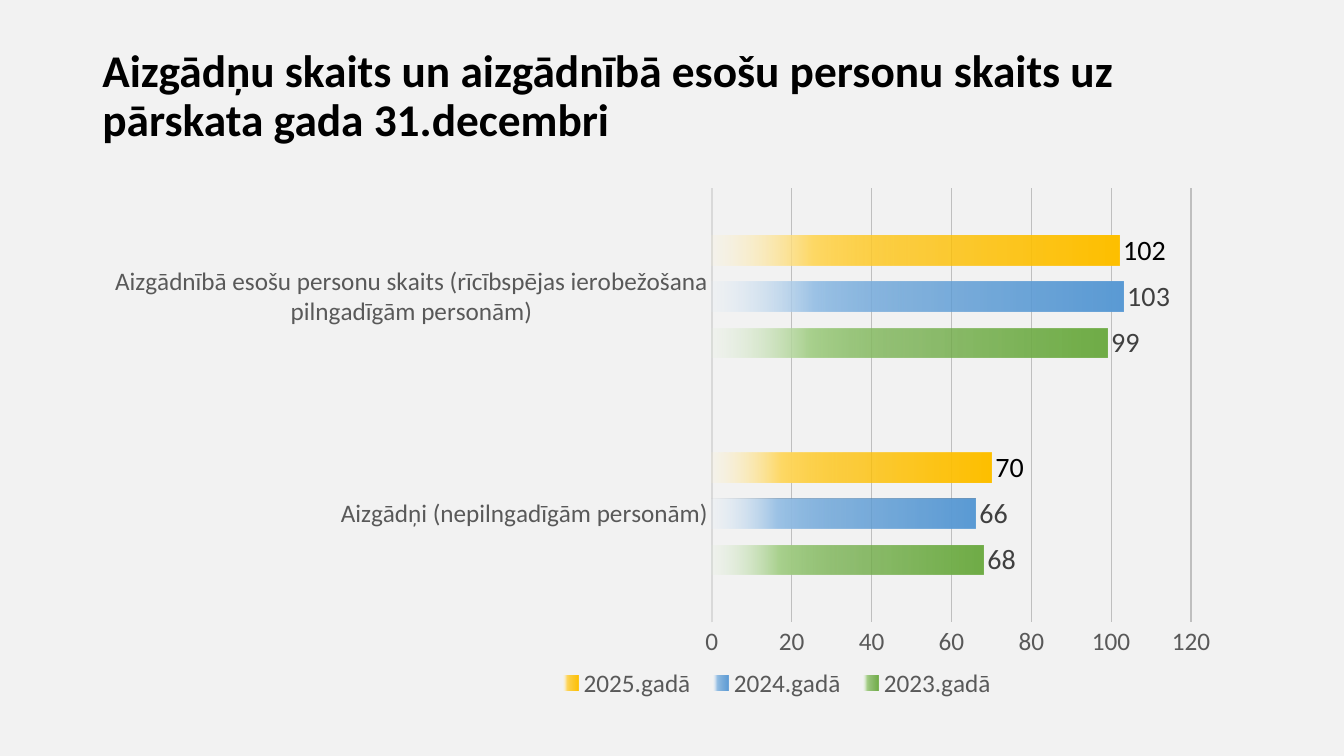
from lxml import etree
from pptx import Presentation
from pptx.chart.data import CategoryChartData
from pptx.dml.color import RGBColor
from pptx.enum.chart import XL_CHART_TYPE, XL_LABEL_POSITION, XL_LEGEND_POSITION, XL_TICK_MARK
from pptx.enum.text import MSO_ANCHOR
from pptx.oxml import parse_xml
from pptx.oxml.ns import nsdecls, qn
from pptx.util import Cm, Pt

CLUSTERED_BARS = XL_CHART_TYPE.BAR_CLUSTERED
OUTSIDE_END = XL_LABEL_POSITION.OUTSIDE_END
BOTTOM = XL_LEGEND_POSITION.BOTTOM
NO_TICK = XL_TICK_MARK.NONE
MIDDLE = MSO_ANCHOR.MIDDLE

FONT = "Calibri"
COLORS = {
    "background": "F2F2F2",
    "heading": "000000",
    "axis_text": "595959",
    "value_text": "404040",
    "axis_line": "D9D9D9",
    "grid": "BFBFBF",
}
HEADING = "Aizgādņu skaits un aizgādnībā esošu personu skaits uz pārskata gada 31.decembri"
GUARDIANSHIPS = [
    "Aizgādņi (nepilngadīgām personām)",
    "Aizgādnībā esošu personu skaits (rīcībspējas ierobežošana pilngadīgām personām)",
]
YEARS = [
    ("2023.gadā", (68, 99), ("70AD47", "A9D18E", "E2F0D9"), "value_text"),
    ("2024.gadā", (66, 103), ("5B9BD5", "9DC3E6", "DEEBF7"), "value_text"),
    ("2025.gadā", (70, 102), ("FFC000", "FFD966", "FFF2CC"), "heading"),
]


def rgb(name):
    return RGBColor.from_string(COLORS[name])


def style_font(font, size, color, bold=False):
    font.name = FONT
    font.size = Pt(size)
    font.bold = bold
    font.color.rgb = rgb(color)


def fade_fill(strong, light, pale):
    stops = [(0, strong, 100), (51, strong, 75), (75, light, 100), (100, pale, 15)]
    fill = parse_xml(f'<a:gradFill {nsdecls("a")}><a:gsLst/><a:lin ang="10800000" scaled="0"/></a:gradFill>')
    for position, color, opacity in stops:
        stop = etree.SubElement(fill[0], qn("a:gs"), pos=str(position * 1000))
        shade = etree.SubElement(stop, qn("a:srgbClr"), val=color)
        if opacity < 100:
            etree.SubElement(shade, qn("a:alpha"), val=str(opacity * 1000))
    return fill


def manual_layout(x, y, w, h, inner=False):
    layout = parse_xml(f'<c:layout {nsdecls("c")}><c:manualLayout/></c:layout>')
    settings = [("layoutTarget", "inner")] if inner else []
    settings += [("xMode", "edge"), ("yMode", "edge"), ("x", x), ("y", y), ("w", w), ("h", h)]
    for tag, value in settings:
        etree.SubElement(layout[0], qn(f"c:{tag}"), val=str(value))
    return layout


def add_heading(slide, left, top, width, height):
    heading = slide.shapes.add_textbox(left, top, width, height).text_frame
    heading.word_wrap = True
    heading.vertical_anchor = MIDDLE
    heading.text = HEADING
    line = heading.paragraphs[0]
    line.line_spacing = 0.9
    style_font(line.runs[0].font, 32.4, "heading", bold=True)


def style_axes(chart):
    guardianship_axis, count_axis = chart.category_axis, chart.value_axis
    for axis in (guardianship_axis, count_axis):
        axis.major_tick_mark = axis.minor_tick_mark = NO_TICK
        style_font(axis.tick_labels.font, 18, "axis_text")
    guardianship_axis.format.line.color.rgb = rgb("axis_line")
    guardianship_axis.format.line.width = Pt(1.5)
    count_axis.format.line.fill.background()
    count_axis.minimum_scale, count_axis.maximum_scale, count_axis.major_unit = 0, 120, 20
    count_axis.has_major_gridlines = True
    grid = count_axis.major_gridlines.format.line
    grid.color.rgb = rgb("grid")
    grid.width = Pt(0.75)


def style_years(plot):
    plot.gap_width = 326
    plot.overlap = -58
    plot.vary_by_categories = False
    for series, (_, _, shades, label_color) in zip(plot.series, YEARS):
        series._element.get_or_add_spPr().insert(0, fade_fill(*shades))
        labels = series.data_labels
        labels.show_value = True
        labels.position = OUTSIDE_END
        style_font(labels.font, 20, label_color)


def add_guardianship_chart(slide, left, top, width, height):
    data = CategoryChartData()
    data.categories = GUARDIANSHIPS
    for year, counts, _, _ in YEARS:
        data.add_series(year, counts)
    chart = slide.shapes.add_chart(CLUSTERED_BARS, left, top, width, height, data).chart
    chart.has_title = False
    style_font(chart.font, 18, "heading")
    style_axes(chart)
    style_years(chart.plots[0])

    chart.has_legend = True
    legend = chart.legend
    legend.position = BOTTOM
    legend.include_in_layout = False
    style_font(legend.font, 18, "axis_text")

    plot_area = chart._chartSpace.chart.plotArea
    for element in (plot_area, legend._element):
        for layout in element.findall(qn("c:layout")):
            element.remove(layout)
    plot_area.insert(0, manual_layout(0.543, 0.02, 0.42, 0.807, inner=True))
    legend._element.insert(1, manual_layout(0.4, 0.9, 0.4, 0.08))


def main():
    deck = Presentation()
    deck.slide_width, deck.slide_height = Cm(33.87), Cm(19.05)
    slide = deck.slides.add_slide(deck.slide_layouts[6])
    slide.background.fill.solid()
    slide.background.fill.fore_color.rgb = rgb("background")
    add_heading(slide, Cm(2.33), Cm(1.01), Cm(29.21), Cm(2.87))
    add_guardianship_chart(slide, Cm(2.33), Cm(4.47), Cm(28.75), Cm(13.56))
    deck.save("out.pptx")


if __name__ == "__main__":
    main()
